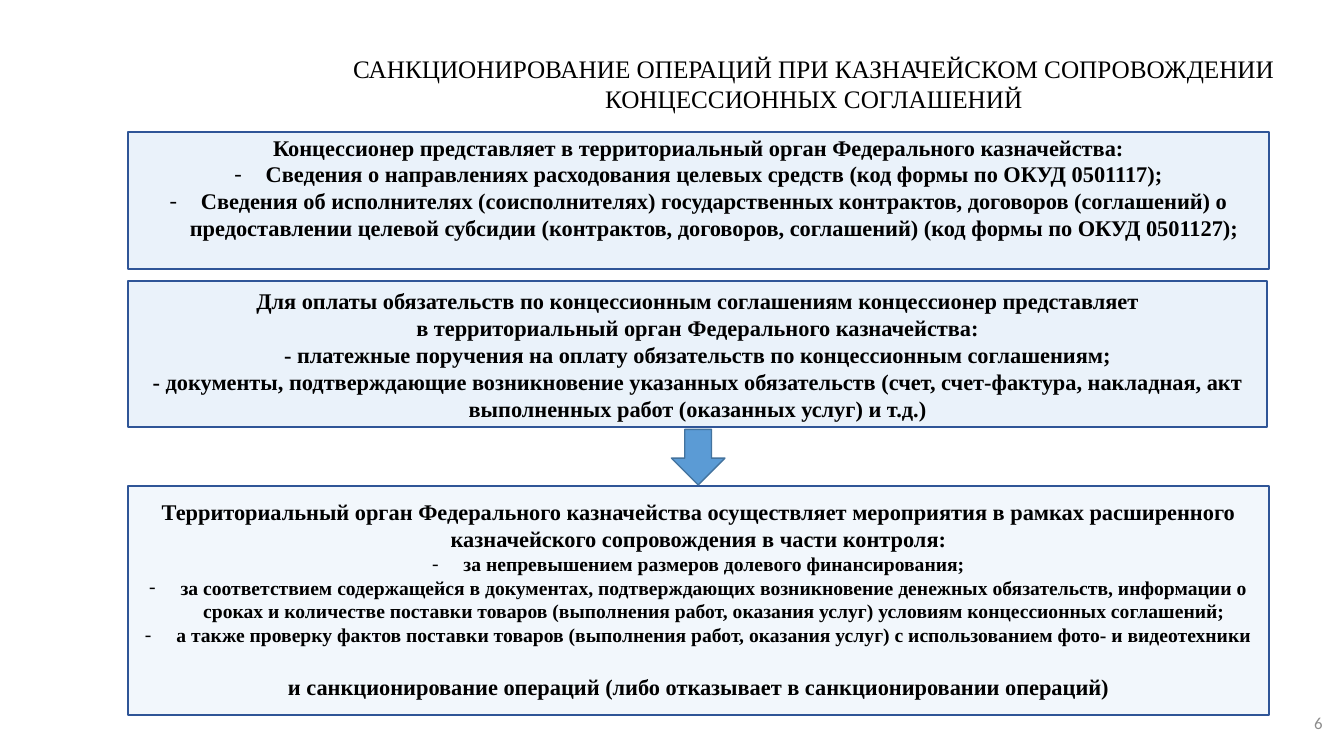
from lxml import etree
from pptx import Presentation
from pptx import util as u
from pptx.dml.color import RGBColor
from pptx.enum import shapes, text
from pptx.oxml.ns import qn

COLORS = {
    "ink": "000000",
    "pale": "EAF2FA",
    "paler": "F2F7FC",
    "border": "2F5597",
    "arrow": "5B9BD5",
    "arrow_edge": "43739E",
    "number": "8C8C8C",
}

TITLE = [
    "САНКЦИОНИРОВАНИЕ ОПЕРАЦИЙ ПРИ КАЗНАЧЕЙСКОМ СОПРОВОЖДЕНИИ",
    "КОНЦЕССИОННЫХ СОГЛАШЕНИЙ",
]
PAGE = "6"

SUBMISSION = [
    ("Концессионер представляет в территориальный орган Федерального казначейства:", {}),
    ("Сведения о направлениях расходования целевых средств (код формы по ОКУД 0501117);",
     {"bullet": True}),
    ("Сведения об исполнителях (соисполнителях) государственных контрактов, договоров "
     "(соглашений) о предоставлении целевой субсидии (контрактов, договоров, соглашений) "
     "(код формы по ОКУД 0501127);", {"bullet": True}),
]
PAYMENT = [
    ("Для оплаты обязательств по концессионным соглашениям концессионер представляет", {}),
    ("в территориальный орган Федерального казначейства:", {}),
    ("- платежные поручения на оплату обязательств по концессионным соглашениям;", {}),
    ("- документы, подтверждающие возникновение указанных обязательств (счет, счет-фактура, "
     "накладная, акт выполненных работ (оказанных услуг) и т.д.)", {}),
]
CONTROL = [
    ("Территориальный орган Федерального казначейства осуществляет мероприятия в рамках "
     "расширенного казначейского сопровождения в части контроля:", {}),
    ("за непревышением размеров долевого финансирования;", {"size": 14, "bullet": True}),
    ("за соответствием содержащейся в документах, подтверждающих возникновение денежных "
     "обязательств, информации о сроках и количестве поставки товаров (выполнения работ, "
     "оказания услуг) условиям концессионных соглашений;", {"size": 14, "bullet": True}),
    ("а также проверку фактов поставки товаров (выполнения работ, оказания услуг) "
     "с использованием фото- и видеотехники", {"size": 14, "bullet": True}),
    ("и санкционирование операций (либо отказывает в санкционировании операций)",
     {"before": 19}),
]

LEFT = 3.23
STAGES = [
    (SUBMISSION, 3.33, 28.75, 3.45, "pale", text.MSO_ANCHOR.TOP, 0.04),
    (PAYMENT, 7.09, 28.7, 3.68, "pale", text.MSO_ANCHOR.MIDDLE, 0.13),
    (CONTROL, 12.24, 28.75, 5.77, "paler", text.MSO_ANCHOR.TOP, 0.32),
]


def write(frame, content, *, size=16, font="Times New Roman", color="ink", bold=True,
          align=text.PP_ALIGN.CENTER, bullet=False, before=0):
    first = frame.paragraphs[0]
    line = frame.add_paragraph() if first.runs else first
    line.alignment = align
    line.line_spacing = 1.0
    line.space_before = u.Pt(before)
    line.space_after = u.Pt(0)
    if bullet:
        props = line._p.get_or_add_pPr()
        props.set("marL", str(u.Cm(0.79)))
        props.set("indent", str(u.Cm(-0.79)))
        etree.SubElement(props, qn("a:buFont")).set("typeface", font)
        etree.SubElement(props, qn("a:buChar")).set("char", "-")
    run = line.add_run()
    run.text = content
    run.font.name = font
    run.font.size = u.Pt(size)
    run.font.bold = bold
    run.font.color.rgb = RGBColor.from_string(COLORS[color])


def draw(slide, kind, left, top, width, height, fill, edge, weight):
    block = slide.shapes.add_shape(kind, u.Cm(left), u.Cm(top), u.Cm(width), u.Cm(height))
    block.shadow.inherit = False
    block.fill.solid()
    block.fill.fore_color.rgb = RGBColor.from_string(COLORS[fill])
    block.line.color.rgb = RGBColor.from_string(COLORS[edge])
    block.line.width = u.Pt(weight)
    return block


def main():
    deck = Presentation()
    deck.slide_width, deck.slide_height = u.Cm(33.87), u.Cm(19.05)
    slide = deck.slides.add_slide(deck.slide_layouts[5])

    heading = slide.shapes.title
    heading.left, heading.top = u.Cm(8.61), u.Cm(1.22)
    heading.width, heading.height = u.Cm(23.8), u.Cm(1.8)
    heading.text_frame.word_wrap = True
    heading.text_frame.auto_size = text.MSO_AUTO_SIZE.NONE
    heading.text_frame.vertical_anchor = text.MSO_ANCHOR.TOP
    for line in TITLE:
        write(heading.text_frame, line, size=18, bold=False)

    for lines, top, width, height, fill, anchor, inset in STAGES:
        stage = draw(slide, shapes.MSO_SHAPE.RECTANGLE, LEFT, top, width, height,
                     fill, "border", 1.5)
        frame = stage.text_frame
        frame.word_wrap = True
        frame.vertical_anchor = anchor
        frame.margin_top = u.Cm(inset)
        for content, style in lines:
            write(frame, content, **style)

    draw(slide, shapes.MSO_SHAPE.DOWN_ARROW, 16.92, 10.82, 1.35, 1.4,
         "arrow", "arrow_edge", 1)

    number = slide.shapes.add_textbox(u.Cm(25.96), u.Cm(17.7), u.Cm(7.62), u.Cm(1.02))
    number.text_frame.word_wrap = True
    number.text_frame.vertical_anchor = text.MSO_ANCHOR.MIDDLE
    write(number.text_frame, PAGE, size=12, font="Calibri", color="number", bold=False,
          align=text.PP_ALIGN.RIGHT)

    deck.save("out.pptx")


if __name__ == "__main__":
    main()
